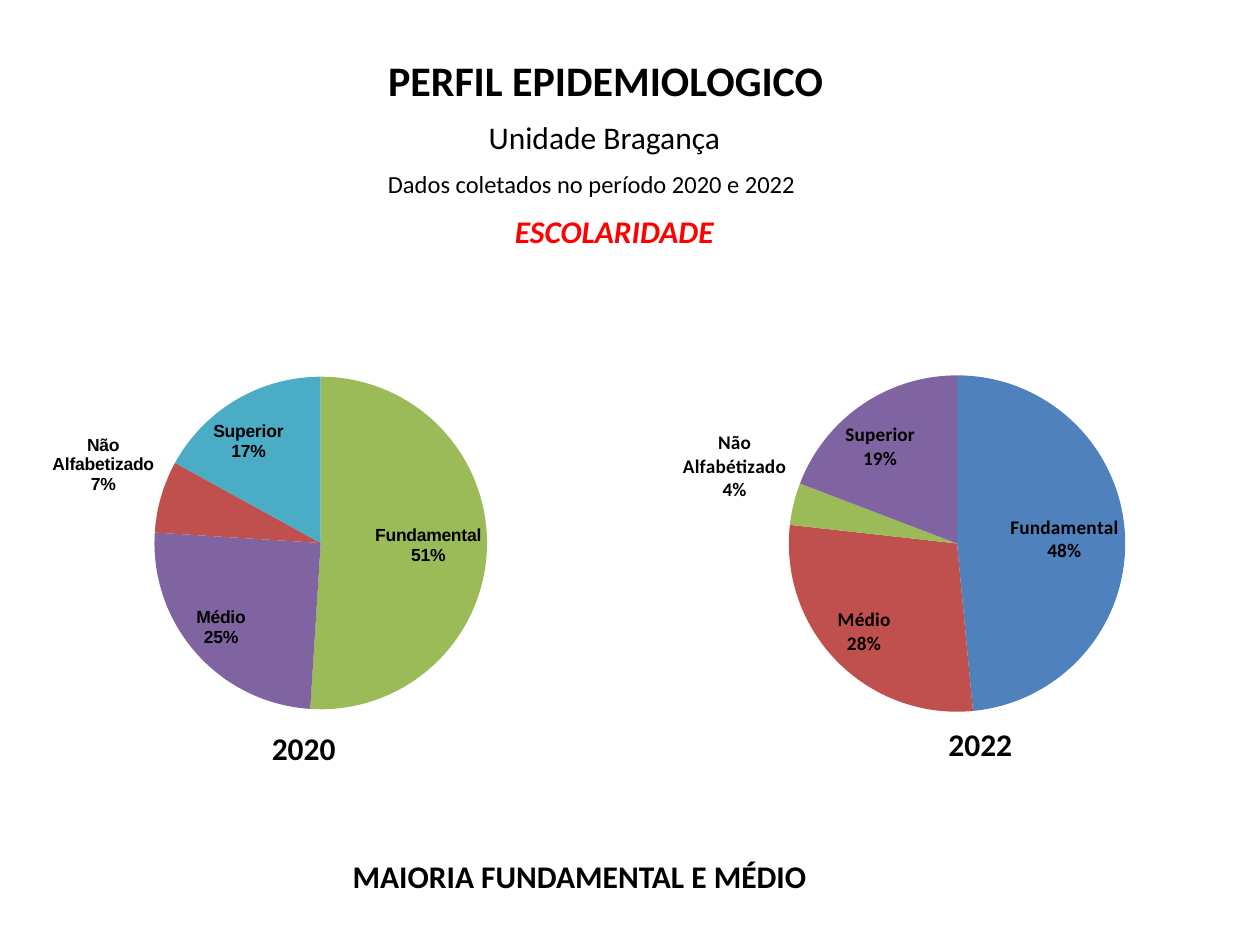
import dataclasses

import lxml.etree
import pptx
import pptx.chart.data
import pptx.dml.color
import pptx.enum.chart
import pptx.enum.text
import pptx.oxml
import pptx.oxml.ns
import pptx.util

Cm = pptx.util.Cm
RGB = pptx.dml.color.RGBColor.from_string


@dataclasses.dataclass(frozen=True)
class Theme:
    text: str = "000000"
    accent: str = "FF0000"
    blue: str = "4F81BD"
    red: str = "C0504D"
    green: str = "9BBB59"
    purple: str = "8064A2"
    aqua: str = "4BACC6"
    font: str = "Calibri"
    label_font: str = "Arial"
    title: int = 24
    heading: int = 18
    note: int = 14


THEME = Theme()


@dataclasses.dataclass(frozen=True)
class Label:
    text: str
    box: tuple[float, float, float, float]
    size: int = THEME.heading
    color: str = THEME.text
    bold: bool = True
    italic: bool = False


@dataclasses.dataclass(frozen=True)
class Pie:
    box: tuple[float, float, float, float]
    plot: tuple[float, float, float, float]
    slices: tuple[tuple[str, int, str], ...]
    font: str
    size: int


TITLE = Label("PERFIL EPIDEMIOLOGICO", (7.57, 0.97, 9.37, 1.27), THEME.title)
LABELS = (
    Label("Unidade Bragança", (9.6, 2.26, 5.23, 1.02), bold=False),
    Label("Dados coletados no período 2020 e 2022", (7.57, 3.28, 8.92, 0.86), THEME.note, bold=False),
    Label("ESCOLARIDADE", (10.13, 4.14, 4.62, 1.02), color=THEME.accent, italic=True),
    Label("2020", (5.23, 14.58, 1.8, 1.02)),
    Label("2022", (18.87, 14.5, 1.8, 1.02)),
    Label("MAIORIA FUNDAMENTAL E MÉDIO", (6.86, 17.15, 9.75, 1.02)),
)
PIES = (
    Pie(
        (-0.2, 7.29, 12.7, 7.62),
        (0.06, 0.04, 0.93, 0.88),
        (
            ("Fundamental", 51, THEME.green),
            ("Médio", 25, THEME.purple),
            ("Não Alfabetizado", 7, THEME.red),
            ("Superior", 17, THEME.aqua),
        ),
        THEME.label_font,
        10,
    ),
    Pie(
        (12.5, 6.73, 12.7, 7.62),
        (0.08, 0.11, 0.91, 0.89),
        (
            ("Fundamental", 48, THEME.blue),
            ("Médio", 28, THEME.red),
            ("Não Alfabétizado", 4, THEME.green),
            ("Superior", 19, THEME.purple),
        ),
        THEME.font,
        11,
    ),
)


def write_text(s, label: Label) -> None:
    """Place a text shape and format its single paragraph."""
    s.left, s.top, s.width, s.height = map(Cm, label.box)
    tf = s.text_frame
    tf.text = label.text
    tf.word_wrap = False
    tf.vertical_anchor = pptx.enum.text.MSO_ANCHOR.TOP
    p = tf.paragraphs[0]
    p.alignment = pptx.enum.text.PP_ALIGN.LEFT
    p.font.name = THEME.font
    p.font.size = pptx.util.Pt(label.size)
    p.font.bold = label.bold
    p.font.italic = label.italic
    p.font.color.rgb = RGB(label.color)


def set_plot_area(chart, plot: tuple[float, float, float, float]) -> None:
    """Fix the inner plot area as fractions of the chart frame."""
    area = chart._chartSpace.find(".//" + pptx.oxml.ns.qn("c:plotArea"))
    for old in area.findall(pptx.oxml.ns.qn("c:layout")):
        area.remove(old)
    tags = ("layoutTarget", "xMode", "yMode", "x", "y", "w", "h")
    values = ("inner", "edge", "edge", *plot)
    items = "".join(f'<c:{tag} val="{value}"/>' for tag, value in zip(tags, values))
    area.insert(0, pptx.oxml.parse_xml(
        f'<c:layout {pptx.oxml.ns.nsdecls("c")}><c:manualLayout>{items}</c:manualLayout></c:layout>'
    ))


def add_pie(slide, pie: Pie) -> None:
    """Add a pie chart labelled with category and percentage."""
    names, values, colors = zip(*pie.slices)
    data = pptx.chart.data.CategoryChartData()
    data.categories = names
    data.add_series("Series 1", values)
    chart = slide.shapes.add_chart(
        pptx.enum.chart.XL_CHART_TYPE.PIE, *map(Cm, pie.box), data
    ).chart
    chart.has_title = False
    chart.has_legend = False
    chart.font.name = THEME.font
    chart.font.size = pptx.util.Pt(10)
    chart.font.color.rgb = RGB(THEME.text)
    set_plot_area(chart, pie.plot)
    chart.plots[0].vary_by_categories = True
    series = chart.plots[0].series[0]
    for i, color in enumerate(colors):
        fill = series.points[i].format.fill
        fill.solid()
        fill.fore_color.rgb = RGB(color)
    labels = series.data_labels
    labels.show_category_name = True
    labels.show_percentage = True
    labels.show_value = False
    labels.number_format = "0%"
    labels.number_format_is_linked = False
    labels.position = pptx.enum.chart.XL_LABEL_POSITION.BEST_FIT
    labels.font.name = pie.font
    labels.font.size = pptx.util.Pt(pie.size)
    labels.font.bold = True
    labels.font.color.rgb = RGB(THEME.text)
    separator = lxml.etree.Element(pptx.oxml.ns.qn("c:separator"))
    separator.text = "\n"
    labels._element.find(pptx.oxml.ns.qn("c:showBubbleSize")).addnext(separator)


def main() -> None:
    """Build the schooling profile slide."""
    prs = pptx.Presentation()
    prs.slide_width, prs.slide_height = Cm(25.4), Cm(19.05)
    slide = prs.slides.add_slide(prs.slide_layouts[5])
    write_text(slide.shapes.title, TITLE)
    for label in LABELS:
        write_text(slide.shapes.add_textbox(*map(Cm, label.box)), label)
    for pie in PIES:
        add_pie(slide, pie)
    prs.save("out.pptx")


if __name__ == "__main__":
    main()
